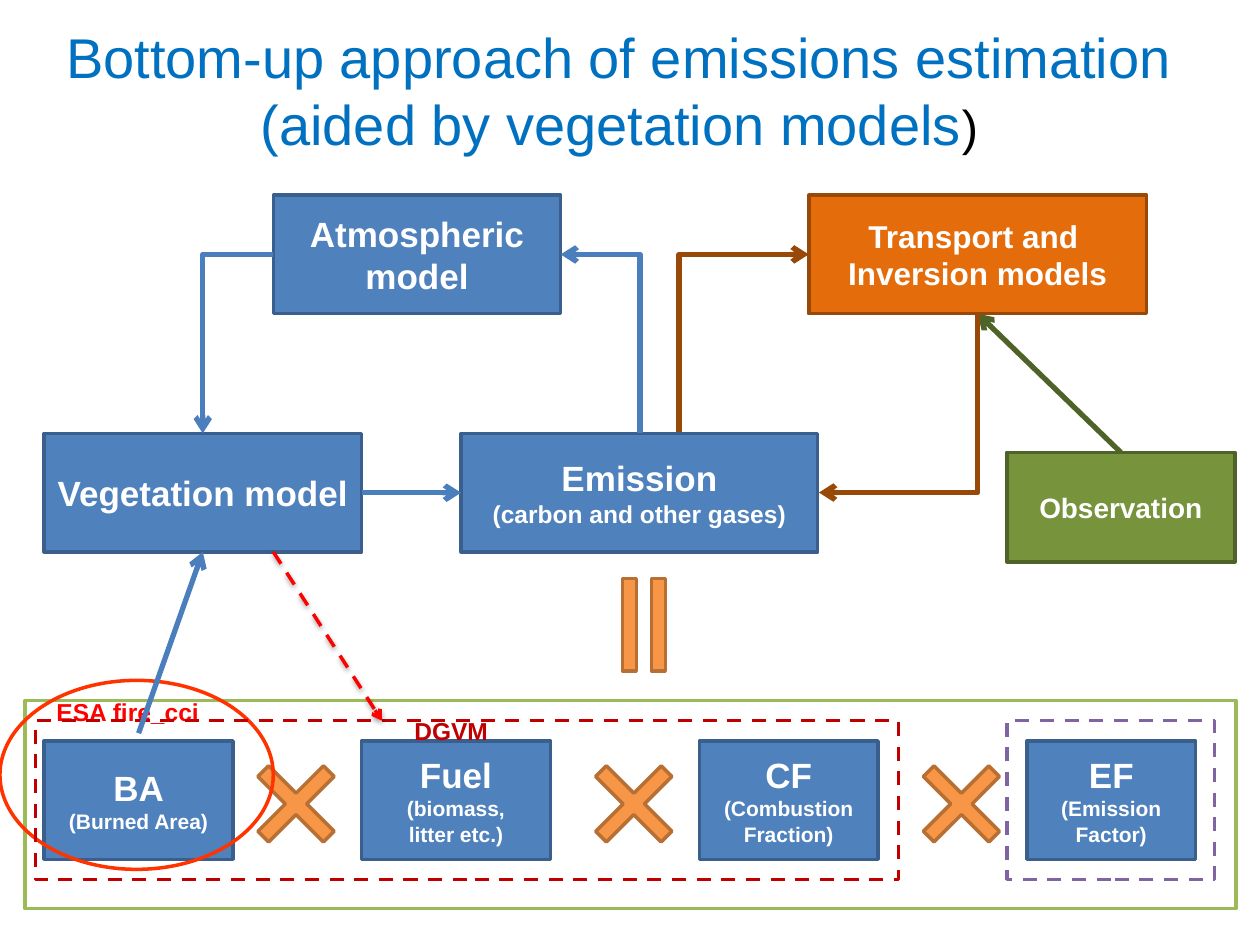
"""Builds a slide on the bottom-up approach of emissions estimation."""
from lxml import etree
from pptx import Presentation
from pptx.dml.color import RGBColor
from pptx.enum import dml, shapes, text
from pptx.oxml.ns import qn
from pptx.util import Pt

rgb = RGBColor.from_string
KIND = shapes.MSO_SHAPE
BLUE, NAVY, SKY = "4F81BD", "3A5F8C", "4B7EBC"
RUST, MOSS, RED = "984807", "4F6228", "C00000"
TOP, MID, LOW, HIGH = 111.6, 247.7, 423.4, 67.7

deck = Presentation()
deck.slide_width, deck.slide_height = Pt(720), Pt(540)
slide = deck.slides.add_slide(deck.slide_layouts[6])


def box(words, x, y, w, h, kind=KIND.RECTANGLE, fill=None, edge=None, dash=False,
        size=20, small=12, color="FFFFFF", bold=True, center=True):
    area = [Pt(v) for v in (x, y, w, h)]
    if kind is None:
        item = slide.shapes.add_textbox(*area)
        item.text_frame.auto_size = text.MSO_AUTO_SIZE.SHAPE_TO_FIT_TEXT
    else:
        item = slide.shapes.add_shape(kind, *area)
        item.shadow.inherit = False
        item.text_frame.vertical_anchor = text.MSO_ANCHOR.MIDDLE
        item.line.color.rgb, item.line.width = rgb(edge), Pt(2)
        if dash:
            item.line.dash_style = dml.MSO_LINE.DASH
        if fill:
            item.fill.solid()
            item.fill.fore_color.rgb = rgb(fill)
        else:
            item.fill.background()
    frame = item.text_frame
    frame.word_wrap = True
    for i, line in enumerate(words.split("\n") if words else []):
        para = frame.add_paragraph() if i else frame.paragraphs[0]
        para.alignment = text.PP_ALIGN.CENTER if center else text.PP_ALIGN.LEFT
        run = para.add_run()
        run.text = line
        font = run.font
        font.name, font.bold, font.size = "Arial", bold, Pt(small if i else size)
        font.color.rgb = rgb(color)
    return item


def link(x1, y1, x2, y2, color, bent=False, tip="tailEnd", width=3):
    kind = shapes.MSO_CONNECTOR.ELBOW if bent else shapes.MSO_CONNECTOR.STRAIGHT
    item = slide.shapes.add_connector(kind, Pt(x1), Pt(y1), Pt(x2), Pt(y2))
    item.line.color.rgb, item.line.width = rgb(color), Pt(width)
    props = item._element.spPr
    if bent:
        props.find(qn("a:prstGeom")).set("prst", "bentConnector2")
    etree.SubElement(item.line._get_or_add_ln(), qn("a:" + tip), type="arrow")
    etree.SubElement(props, qn("a:effectLst"))
    return item


gas = box("Emission\n(carbon and other gases)", 263.5, MID, 203.8, HIGH,
          fill=BLUE, edge=NAVY, small=14)
for words, x, w in (("BA\n(Burned Area)", 25.2, 108),
                    ("CF\n(Combustion Fraction)", 399.6, 102.2),
                    ("EF\n(Emission Factor)", 586.8, 96.5)):
    box(words, x, LOW, w, HIGH, fill=BLUE, edge=NAVY)

for kind, x, y, turn, tune in ((KIND.MATH_MULTIPLY, 133.2, LOW, 0, [0.12]),
                               (KIND.MATH_MULTIPLY, 513.4, LOW, 0, [0.12]),
                               (KIND.MATH_MULTIPLY, 326.2, LOW, 0, [0.12]),
                               (KIND.MATH_EQUAL, 331.9, 321.1, 90, [0.11, 0.12])):
    sign = box("", x, y, 72, 72, kind=kind, fill="F79646", edge="B76F34")
    sign.rotation = turn
    for i, value in enumerate(tune):
        sign.adjustments[i] = value

box("", 14.4, 400.3, 691.9, 118.8, edge="9BBB59")
box("", 0, 388.8, 156.2, 108, kind=KIND.OVAL, edge="FF3300")
box("ESA fire_cci", 25.2, 394.6, 108, 24.5, kind=None, size=14,
    color="FF0000", center=False)
box("Fuel\n(biomass,\nlitter etc.)", 206.6, LOW, 108, HIGH, fill=BLUE, edge=NAVY)
box("DGVM", 229.7, 405.4, 79.2, 24.5, kind=None, size=14, color=RED, center=False)
for x, w, edge in ((20.2, 493.2, RED), (575.3, 118.8, "8064A2")):
    box("", x, 411.8, w, 90.7, edge=edge, dash=True)

box("Atmospheric model", 156.2, TOP, 164.2, HIGH, fill=BLUE, edge=NAVY)
plant = box("Vegetation model", 25.2, MID, 181.4, HIGH, fill=BLUE, edge=NAVY)
link(320.4, 145.4, 365.8, MID, SKY, bent=True, tip="headEnd")
link(156.2, 145.4, 115.9, MID, SKY, bent=True)
feed = link(206.6, 281.5, 263.5, 281.5, SKY)
feed.begin_connect(plant, 3)
feed.end_connect(gas, 1)

wind = box("Transport and \nInversion models", 462.2, TOP, 193, HIGH,
           fill="E46C0A", edge=RUST, size=18, small=18)
watch = box("Observation", 575.3, 258.5, 130.3, 62.6, fill="77933C", edge=MOSS, size=16)
link(462.2, 145.4, 388.1, 247, RUST, bent=True, tip="headEnd")
check = link(640.8, 258.5, 558.7, 179.3, MOSS)
check.begin_connect(watch, 0)
check.end_connect(wind, 2)
link(468, 281.5, 558.7, 179.3, RUST, bent=True, tip="headEnd")
burn = link(79.2, 419, 115.9, 315.4, SKY)
burn.end_connect(plant, 2)

title = box("Bottom-up approach of emissions estimation (aided by vegetation models",
            13.7, 9.4, 680.4, 85, kind=None, size=32, color="0070C0", bold=False)
close = title.text_frame.paragraphs[0].add_run()
close.text = ")"
close.font.name, close.font.size = "Arial", Pt(28)
close.font.color.rgb = rgb("000000")

fuel = link(156.2, 315.4, 218.2, 411.8, "FF0000", width=2)
fuel.line.dash_style = dml.MSO_LINE.DASH
glow = etree.SubElement(fuel._element.spPr.find(qn("a:effectLst")), qn("a:outerShdw"),
                        blurRad="40000", dist="20000", dir="5400000", rotWithShape="0")
shade = etree.SubElement(glow, qn("a:srgbClr"), val="000000")
etree.SubElement(shade, qn("a:alpha"), val="38000")

deck.save("out.pptx")
